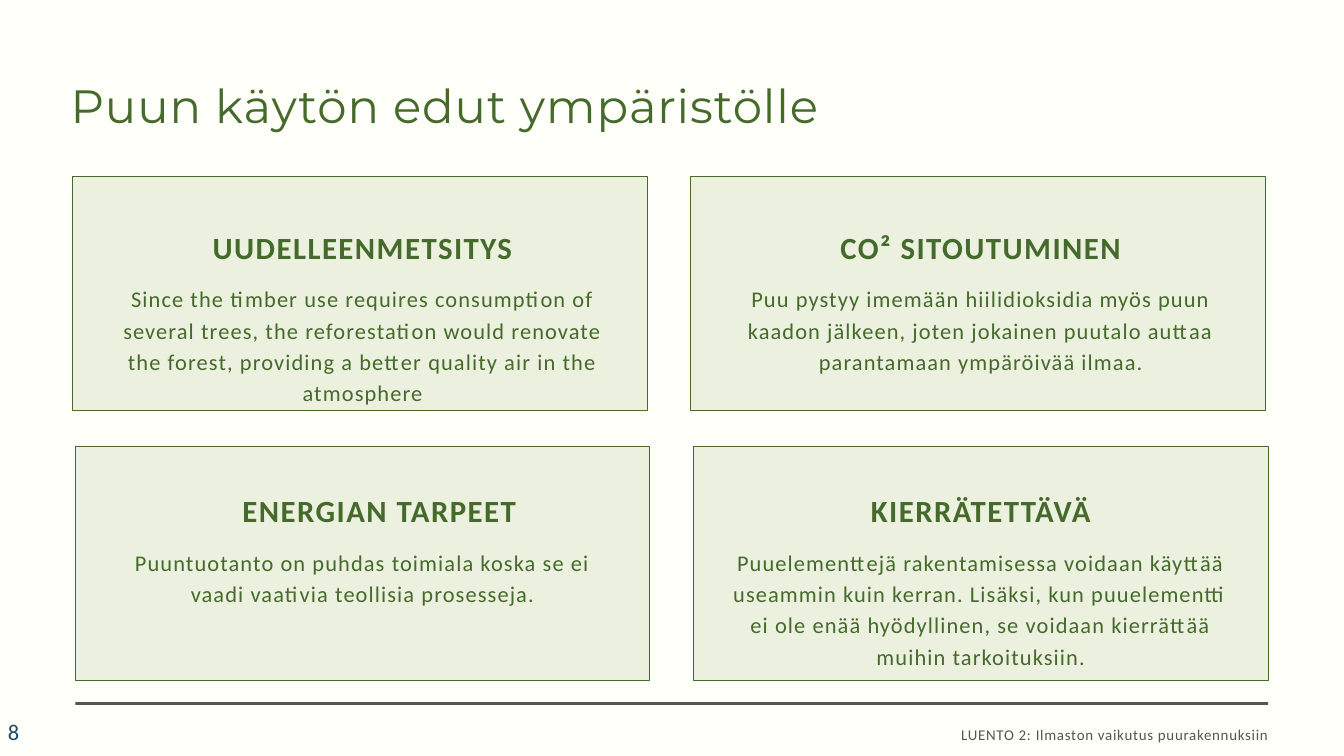
"""Build a slide with four cards on the environmental benefits of timber."""
from pptx import Presentation
from pptx.dml.color import RGBColor
from pptx.enum.shapes import MSO_SHAPE
from pptx.enum.text import MSO_ANCHOR, MSO_AUTO_SIZE, PP_ALIGN
from pptx.util import Inches, Pt

RECTANGLE = MSO_SHAPE.RECTANGLE
LEFT, CENTER, RIGHT = PP_ALIGN.LEFT, PP_ALIGN.CENTER, PP_ALIGN.RIGHT
TOP, MIDDLE = MSO_ANCHOR.TOP, MSO_ANCHOR.MIDDLE

TITLE = "Puun käytön edut ympäristölle"
FOOTER = "LUENTO 2: Ilmaston vaikutus puurakennuksiin"
PAGE_NUMBER = "8"
CARDS = [
    [
        ("UUDELLEENMETSITYS",
         "Since the timber use requires consumption of several trees, the reforestation "
         "would renovate the forest, providing a better quality air in the atmosphere"),
        ("CO² SITOUTUMINEN",
         "Puu pystyy imemään hiilidioksidia myös puun kaadon jälkeen, joten jokainen "
         "puutalo auttaa parantamaan ympäröivää ilmaa."),
    ],
    [
        ("ENERGIAN TARPEET",
         "Puuntuotanto on puhdas toimiala koska se ei vaadi vaativia teollisia prosesseja."),
        ("KIERRÄTETTÄVÄ",
         "Puuelementtejä rakentamisessa voidaan käyttää useammin kuin kerran. Lisäksi, kun "
         "puuelementti ei ole enää hyödyllinen, se voidaan kierrättää muihin tarkoituksiin."),
    ],
]
INDENTED_HEADING = "ENERGIAN TARPEET"

COLORS = {"background": "FEFFF8", "green": "456A2C", "card": "EBF1DE",
          "gray": "52584D", "blue": "1E4D65"}
FORMATS = {
    "title": {"size": 50, "name": "Montserrat", "color": "green", "spacing": 1,
              "line": 66.8, "align": LEFT},
    "heading": {"size": 33, "bold": True, "color": "green", "spacing": 1.6,
                "line": 41.2, "align": CENTER},
    "body": {"size": 24, "color": "green", "spacing": 1.2, "line": 33.6, "align": CENTER},
    "number": {"size": 24, "color": "blue", "spacing": 1.2, "align": LEFT,
               "anchor": MIDDLE, "inset": 0.1},
    "footer": {"size": 16, "color": "gray", "spacing": 0.8, "line": 22.4, "align": RIGHT},
}

SLIDE_WIDTH, SLIDE_HEIGHT = 20, 11.25
CARD_WIDTH, CARD_HEIGHT = 8.55, 3.48
COLUMN_STEP = 9.2
CARD_ROWS = [
    {"left": 1.08, "top": 2.62, "heading_top": 3.38},
    {"left": 1.12, "top": 6.64, "heading_top": 7.3},
]
TEXT_LEFT, TEXT_WIDTH = 1.7, 7.39
HEADING_HEIGHT, BODY_OFFSET, BODY_HEIGHT = 0.56, 0.8, 1.87


def color(name):
    return RGBColor.from_string(COLORS[name])


def write(shape, text, style):
    look = FORMATS[style]
    frame = shape.text_frame
    inset = Inches(look.get("inset", 0))
    settings = {"word_wrap": True, "auto_size": MSO_AUTO_SIZE.NONE,
                "vertical_anchor": look.get("anchor", TOP),
                "margin_left": inset, "margin_right": inset,
                "margin_top": inset // 2, "margin_bottom": inset // 2}
    for attribute, value in settings.items():
        setattr(frame, attribute, value)
    paragraph = frame.paragraphs[0]
    paragraph.alignment = look["align"]
    if "line" in look:
        paragraph.line_spacing = Pt(look["line"])
    run = paragraph.add_run()
    run.text = text
    font = {"name": look.get("name", "Calibri"), "size": Pt(look["size"]),
            "bold": look.get("bold", False)}
    for attribute, value in font.items():
        setattr(run.font, attribute, value)
    run.font.color.rgb = color(look["color"])
    run._r.get_or_add_rPr().set("spc", str(round(look["spacing"] * 100)))
    return paragraph


def add_text(slide, text, style, *box):
    return write(slide.shapes.add_textbox(*map(Inches, box)), text, style)


def add_box(slide, fill, box, line=None):
    shape = slide.shapes.add_shape(RECTANGLE, *map(Inches, box))
    shape.shadow.inherit = False
    shape.fill.solid()
    shape.fill.fore_color.rgb = color(fill)
    if line:
        shape.line.color.rgb = color(line)
        shape.line.width = Pt(0.75)
    else:
        shape.line.fill.background()


def add_card(slide, row, column, heading, body):
    place = CARD_ROWS[row]
    shift = column * COLUMN_STEP
    text_left = TEXT_LEFT + shift
    add_box(slide, "card", (place["left"] + shift, place["top"], CARD_WIDTH, CARD_HEIGHT), "green")
    paragraph = add_text(slide, heading, "heading",
                         text_left, place["heading_top"], TEXT_WIDTH, HEADING_HEIGHT)
    if heading == INDENTED_HEADING:
        paragraph.level = 1
        properties = paragraph._p.get_or_add_pPr()
        properties.set("marL", str(Inches(0.5)))
        properties.set("indent", "0")
    add_text(slide, body, "body",
             text_left, place["heading_top"] + BODY_OFFSET, TEXT_WIDTH, BODY_HEIGHT)


def main():
    presentation = Presentation()
    presentation.slide_width = Inches(SLIDE_WIDTH)
    presentation.slide_height = Inches(SLIDE_HEIGHT)
    slide = presentation.slides.add_slide(presentation.slide_layouts[5])
    slide.background.fill.solid()
    slide.background.fill.fore_color.rgb = color("background")

    title = slide.shapes.title
    title_box = {"left": 1.05, "top": 1.05, "width": 18.12, "height": 0.89}
    for attribute, value in title_box.items():
        setattr(title, attribute, Inches(value))
    write(title, TITLE, "title")

    for row, cards in enumerate(CARDS):
        for column, (heading, body) in enumerate(cards):
            add_card(slide, row, column, heading, body)

    add_box(slide, "gray", (1.12, 10.45, 17.75, 0.04))
    add_text(slide, PAGE_NUMBER, "number", 0.02, 10.69, 2.33, 0.4)
    add_text(slide, FOOTER, "footer", 10.56, 10.75, 8.32, 0.29)
    presentation.save("out.pptx")


if __name__ == "__main__":
    main()
